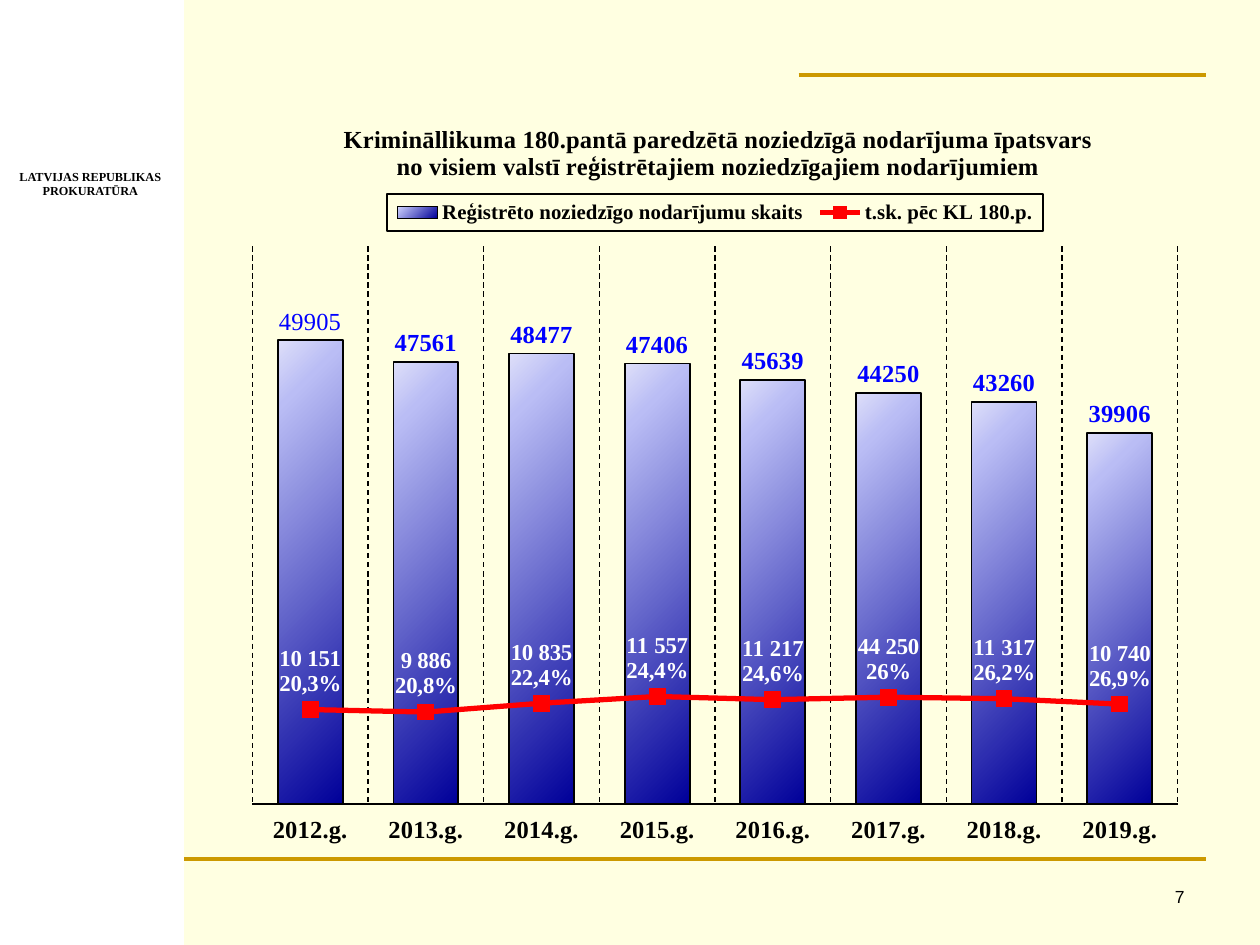
from lxml.etree import SubElement
from pptx import Presentation
from pptx.chart.data import CategoryChartData
from pptx.dml.color import RGBColor
from pptx.enum.chart import XL_CHART_TYPE, XL_LABEL_POSITION, XL_LEGEND_POSITION, XL_MARKER_STYLE, XL_TICK_LABEL_POSITION, XL_TICK_MARK
from pptx.enum.dml import MSO_LINE
from pptx.enum.shapes import MSO_CONNECTOR, MSO_SHAPE
from pptx.enum.text import MSO_AUTO_SIZE, PP_ALIGN
from pptx.oxml import parse_xml
from pptx.oxml.ns import nsdecls, qn
from pptx.util import Cm, Pt

INK = {"black": "000000", "white": "FFFFFF", "cream": "FFFFE1", "gold": "CC9900", "blue": "0000FF",
       "red": "FF0000", "navy": "000099", "lilac": "BABDF5", "pale": "DEDFF9"}
SERIF = "Times New Roman"


def style(font, ink, **values):
    for key, value in values.items():
        setattr(font, key, value)
    font.color.rgb = RGBColor.from_string(INK[ink])


def place(mark, spots, target=None):
    layout = parse_xml(f"<c:layout {nsdecls('c')}><c:manualLayout/></c:layout>")
    if target:
        SubElement(layout[0], qn("c:layoutTarget")).set("val", target)
    for key in ("xMode", "yMode"):
        SubElement(layout[0], qn("c:" + key)).set("val", "edge")
    for key, value in zip("xywh", spots):
        SubElement(layout[0], qn("c:" + key)).set("val", str(value))
    mark.addnext(layout)


deck = Presentation()
deck.slide_width, deck.slide_height = Cm(25.4), Cm(19.05)
slide = deck.slides.add_slide(deck.slide_layouts[6])
slide.background.fill.solid()
slide.background.fill.fore_color.rgb = RGBColor.from_string(INK["cream"])

band = slide.shapes.add_shape(MSO_SHAPE.RECTANGLE, 0, 0, Cm(3.71), Cm(19.05))
band.shadow.inherit = False
band.fill.solid()
band.fill.fore_color.rgb = RGBColor.from_string(INK["white"])
band.line.fill.background()

for left, top in ((3.71, 17.32), (16.1, 1.52)):
    rule = slide.shapes.add_connector(MSO_CONNECTOR.STRAIGHT, Cm(left), Cm(top), Cm(24.31), Cm(top))
    rule.line.color.rgb = RGBColor.from_string(INK["gold"])
    rule.line.width = Pt(2.25)
    SubElement(rule._element.spPr, qn("a:effectLst"))

notes = (
    ("LATVIJAS REPUBLIKAS\nPROKURATŪRA", (0.13, 3.28, 3.38, 0.84), False, PP_ALIGN.CENTER,
     {"name": SERIF, "size": Pt(7), "bold": True}),
    ("7", (18.85, 17.73, 5.28, 0.89), True, PP_ALIGN.RIGHT, {"name": "Arial", "size": Pt(10)}),
)
for text, spot, wrap, align, values in notes:
    frame = slide.shapes.add_textbox(*map(Cm, spot)).text_frame
    frame.word_wrap = wrap
    frame.auto_size = MSO_AUTO_SIZE.NONE if wrap else MSO_AUTO_SIZE.SHAPE_TO_FIT_TEXT
    frame.text = text
    for line in frame.paragraphs:
        line.alignment = align
        style(line.font, "black", **values)

data = CategoryChartData()
data.categories = [f"{year}.g." for year in range(2012, 2020)]
data.add_series("Reģistrēto noziedzīgo nodarījumu skaits",
                (49905, 47561, 48477, 47406, 45639, 44250, 43260, 39906))
data.add_series("t.sk. pēc KL 180.p.", (10151, 9886, 10835, 11557, 11217, 11485, 11317, 10740))
chart = slide.shapes.add_chart(XL_CHART_TYPE.COLUMN_CLUSTERED, Cm(4.7), Cm(1.93), Cm(19.43), Cm(15.19), data).chart
style(chart.font, "black", name=SERIF, size=Pt(10))
root = chart._chartSpace
root.find(qn("c:chart")).addnext(parse_xml(
    f'<c:spPr {nsdecls("c", "a")}><a:solidFill><a:srgbClr val="{INK["cream"]}"/></a:solidFill>'
    '<a:ln><a:noFill/></a:ln></c:spPr>'))

chart.has_title = True
title = chart.chart_title.text_frame
title.text = ("Krimināllikuma 180.pantā paredzētā noziedzīgā nodarījuma īpatsvars "
              "no visiem valstī reģistrētajiem noziedzīgajiem nodarījumiem")
style(title.paragraphs[0].runs[0].font, "black", name=SERIF, size=Pt(14), bold=True)
head = chart.chart_title._element
for old in head.findall(qn("c:layout")):
    head.remove(old)
place(head.find(qn("c:tx")), (0.11, 0.03))
chart.chart_title.include_in_layout = False

chart.has_legend = True
legend = chart.legend
legend.position = XL_LEGEND_POSITION.TOP
legend.include_in_layout = False
style(legend.font, "black", name=SERIF, size=Pt(11.9), bold=True)
key = legend._element
for old in key.findall(qn("c:layout")):
    key.remove(old)
place(key.find(qn("c:legendPos")), (0.16, 0.13, 0.68, 0.05))
key.find(qn("c:overlay")).addnext(parse_xml(
    f'<c:spPr {nsdecls("c", "a")}><a:solidFill><a:srgbClr val="{INK["cream"]}"/></a:solidFill>'
    f'<a:ln w="12700"><a:solidFill><a:srgbClr val="{INK["black"]}"/></a:solidFill></a:ln></c:spPr>'))

years, scale = chart.category_axis, chart.value_axis
years.major_tick_mark = years.minor_tick_mark = XL_TICK_MARK.NONE
years.tick_label_position = XL_TICK_LABEL_POSITION.LOW
style(years.tick_labels.font, "black", name=SERIF, size=Pt(14), bold=True)
years.has_major_gridlines = True
grid = years.major_gridlines.format.line
for line, width in ((years.format.line, 1.5), (grid, 0.75)):
    line.color.rgb = RGBColor.from_string(INK["black"])
    line.width = Pt(width)
grid.dash_style = MSO_LINE.DASH
scale.minimum_scale, scale.maximum_scale = 0, 60000
scale.has_major_gridlines = scale.visible = False

bars = chart.plots[0]
bars.gap_width, bars.overlap, bars.vary_by_categories = 78, -34, False
group = bars._element
moved = group.findall(qn("c:ser"))[1]
for old in moved.findall(qn("c:invertIfNegative")):
    moved.remove(old)
trend = parse_xml(f'<c:lineChart {nsdecls("c")}><c:grouping val="standard"/><c:varyColors val="0"/>'
                  '<c:marker val="1"/></c:lineChart>')
trend.insert(2, moved)
for axis in group.findall(qn("c:axId")):
    SubElement(trend, qn("c:axId")).set("val", axis.get("val"))
group.addnext(trend)
area = group.getparent()
for old in area.findall(qn("c:layout")):
    area.remove(old)
mark = parse_xml(f"<c:layout {nsdecls('c')}/>")
area.insert(0, mark)
place(mark, (0.02, 0.2, 0.96, 0.74), "inner")
area.remove(mark)

total, part = (plot.series[0] for plot in chart.plots)
total.format.line.color.rgb = RGBColor.from_string(INK["black"])
total.format.line.width = Pt(1)
stops = "".join(f'<a:gs pos="{pos}000"><a:srgbClr val="{INK[ink]}"/></a:gs>'
                for pos, ink in ((0, "navy"), (87, "lilac"), (100, "pale")))
total._element.spPr.insert(0, parse_xml(
    f'<a:gradFill {nsdecls("a")} rotWithShape="1"><a:gsLst>{stops}</a:gsLst>'
    '<a:path path="circle"><a:fillToRect l="100000" t="100000"/></a:path></a:gradFill>'))

red = RGBColor.from_string(INK["red"])
part.smooth = False
part.format.line.color.rgb = red
part.format.line.width = Pt(3)
part.marker.style, part.marker.size = XL_MARKER_STYLE.SQUARE, 9
part.marker.format.fill.solid()
part.marker.format.fill.fore_color.rgb = red
part.marker.format.line.color.rgb = red

shares = ("10 151\n20,3%", "9 886\n20,8%", "10 835\n22,4%", "11 557\n24,4%",
          "11 217\n24,6%", "44 250\n26%", "11 317\n26,2%", "10 740\n26,9%")
labels = (
    (total, ("49905",), "blue", 14, False, XL_LABEL_POSITION.OUTSIDE_END),
    (part, shares, "white", 13, True, XL_LABEL_POSITION.ABOVE),
)
for series, texts, ink, size, bold, spot in labels:
    every = series.data_labels
    every.show_value, every.position = True, spot
    style(every.font, ink, name=SERIF, size=Pt(size), bold=True)
    for index, text in enumerate(texts):
        label = series.points[index].data_label
        label.text_frame.text = text
        label.position = spot
        for line in label.text_frame.paragraphs:
            style(line.runs[0].font, ink, name=SERIF, size=Pt(size), bold=bold)

deck.save("out.pptx")
